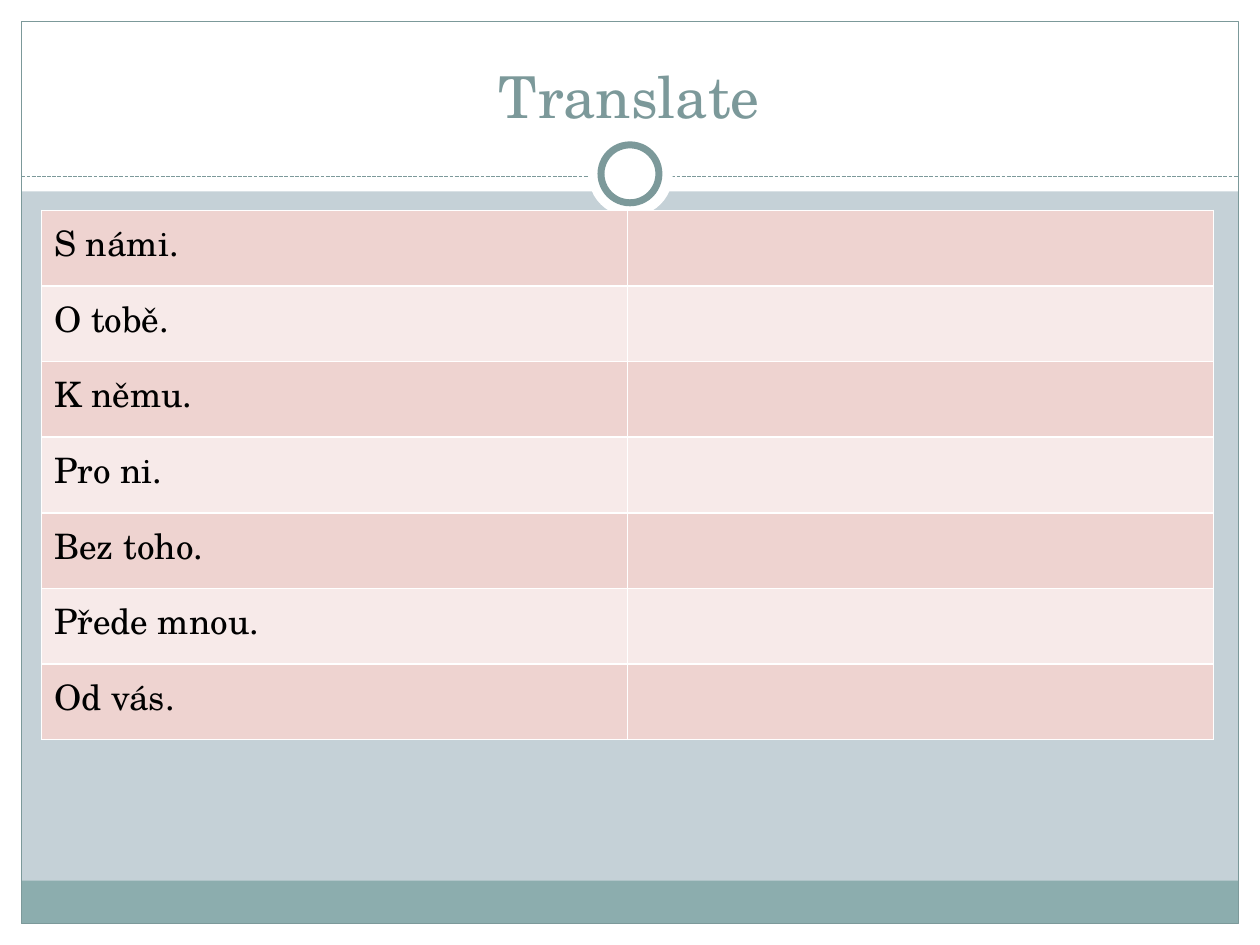
from lxml.etree import SubElement
from pptx import Presentation
from pptx.dml.color import RGBColor
from pptx.enum.dml import MSO_LINE_DASH_STYLE as Dash
from pptx.enum.shapes import MSO_CONNECTOR as Connector, MSO_SHAPE as Shape
from pptx.enum.text import MSO_ANCHOR as Anchor, PP_ALIGN as Align
from pptx.oxml.ns import qn
from pptx.util import Pt

PX = 9144
WIDTH, HEIGHT = 1000, 750
COLORS = {
    "background": "C5D1D7",
    "white": "FFFFFF",
    "accent": "7C999A",
    "footer": "8CADAE",
    "black": "000000",
    "row_dark": "EED3D0",
    "row_light": "F7EAE9",
}
PHRASES = ["S námi.", "O tobě.", "K němu.", "Pro ni.", "Bez toho.", "Přede mnou.", "Od vás."]


def rgb(name):
    return RGBColor.from_string(COLORS[name])


def write(frame, text, size=20, color="black", font="TeX Gyre Schola", align=Align.LEFT):
    paragraph = frame.paragraphs[0]
    paragraph.alignment = align
    run = paragraph.add_run()
    run.text = text
    run.font.size = Pt(size)
    run.font.name = font
    run.font.color.rgb = rgb(color)


class SlideBuilder:
    def __init__(self, slide):
        self.slide = slide
        background = slide.background.fill
        background.solid()
        background.fore_color.rgb = rgb("background")

    def shape(self, kind, x, y, w, h, fill=None, line=None, weight=0.75):
        shape = self.slide.shapes.add_shape(kind, x * PX, y * PX, w * PX, h * PX)
        shape.shadow.inherit = False
        if fill:
            shape.fill.solid()
            shape.fill.fore_color.rgb = rgb(fill)
        else:
            shape.fill.background()
        if line:
            shape.line.color.rgb = rgb(line)
            shape.line.width = Pt(weight)
        else:
            shape.line.fill.background()

    def dashed_line(self, x1, y1, x2, y2):
        rule = self.slide.shapes.add_connector(
            Connector.STRAIGHT, x1 * PX, y1 * PX, x2 * PX, y2 * PX)
        rule.line.color.rgb = rgb("accent")
        rule.line.width = Pt(0.75)
        rule.line.dash_style = Dash.SQUARE_DOT
        SubElement(rule._element.spPr, qn("a:effectLst"))

    def title(self, text, x, y, w, h):
        frame = self.slide.shapes.add_textbox(x * PX, y * PX, w * PX, h * PX).text_frame
        frame.word_wrap = True
        frame.vertical_anchor = Anchor.BOTTOM
        write(frame, text, size=33, color="accent", align=Align.CENTER)

    def cell(self, cell, fill):
        cell.fill.solid()
        cell.fill.fore_color.rgb = rgb(fill)
        properties = cell._tc.get_or_add_tcPr()
        for index, side in enumerate(("lnL", "lnR", "lnT", "lnB")):
            border = properties.makeelement(qn(f"a:{side}"), {"w": str(Pt(1))})
            properties.insert(index, border)
            paint = SubElement(border, qn("a:solidFill"))
            SubElement(paint, qn("a:srgbClr"), val=COLORS["white"])

    def phrase_table(self, phrases, x, y, column_width, row_height):
        table = self.slide.shapes.add_table(
            len(phrases), 2, x * PX, y * PX,
            2 * column_width * PX, len(phrases) * row_height * PX).table
        table.first_row = False
        for index, phrase in enumerate(phrases):
            fill = "row_light" if index % 2 else "row_dark"
            for column in range(2):
                self.cell(table.cell(index, column), fill)
            write(table.cell(index, 0).text_frame, phrase)


def main():
    deck = Presentation()
    deck.slide_width, deck.slide_height = WIDTH * PX, HEIGHT * PX
    page = SlideBuilder(deck.slides.add_slide(deck.slide_layouts[6]))

    margin = 17
    inner_width, inner_height = WIDTH - 2 * margin, HEIGHT - 2 * margin
    for band in (
        (0, HEIGHT - margin, WIDTH, margin),
        (0, 0, WIDTH, 152),
        (0, 0, margin, HEIGHT),
        (WIDTH - margin, 0, margin, HEIGHT),
    ):
        page.shape(Shape.RECTANGLE, *band, fill="white")
    page.shape(Shape.RECTANGLE, margin, 699, inner_width, 34, fill="footer")
    page.shape(Shape.RECTANGLE, margin, margin, inner_width, inner_height, line="accent")
    page.dashed_line(margin, 140, WIDTH - margin, 140)
    page.shape(Shape.OVAL, 467, 105, 67, 67, fill="white")
    page.shape(Shape.OVAL, 477, 115, 46, 46, fill="white", line="accent", weight=4)

    page.title("Translate", 33, 25, 933, 83)
    page.phrase_table(PHRASES, 33, 167, 465, 60)
    deck.save("out.pptx")


if __name__ == "__main__":
    main()
